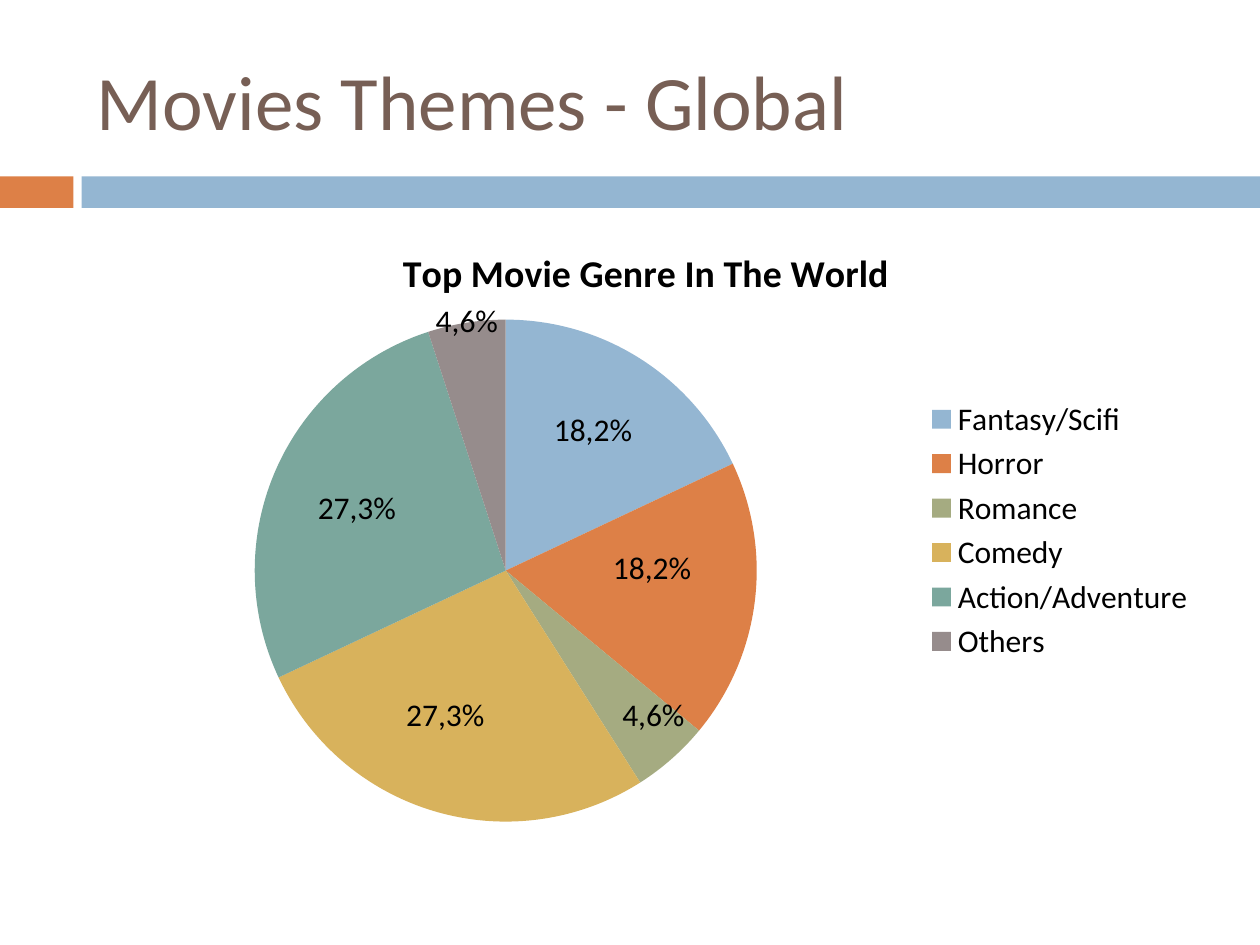
from lxml import etree
from pptx import Presentation
from pptx.chart.data import CategoryChartData
from pptx.dml.color import RGBColor
from pptx.enum.chart import XL_CHART_TYPE, XL_LEGEND_POSITION
from pptx.enum.shapes import MSO_SHAPE
from pptx.enum.text import MSO_ANCHOR, MSO_AUTO_SIZE
from pptx.oxml.ns import qn
from pptx.util import Pt

FONT = "Calibri"
BLUE, ORANGE, BROWN, BLACK = "94B6D2", "DD8047", "775F55", "000000"

# Genre, value, slice colour, then share label with its left and top
GENRES = [
    ("Fantasy/Scifi", 18, BLUE, "18,2%", 309.4, 230.8),
    ("Horror", 18, ORANGE, "18,2%", 343.2, 309.6),
    ("Romance", 5, "A5AB81", "4,6%", 348.5, 393.8),
    ("Comedy", 27, "D8B25C", "27,3%", 225, 393.8),
    ("Action/Adventure", 27, "7BA79D", "27,3%", 174.5, 275.4),
    ("Others", 5, "968C8C", "4,6%", 241.9, 168.5),
]


def color(hex_code):
    return RGBColor.from_string(hex_code)


def style_font(font, size, hex_code):
    font.name = FONT
    font.size = Pt(size)
    font.color.rgb = color(hex_code)


def add_bar(page, left, width, hex_code):
    bar = page.shapes.add_shape(
        MSO_SHAPE.RECTANGLE, Pt(left), Pt(100.8), Pt(width), Pt(18))
    bar.shadow.inherit = False
    bar.fill.solid()
    bar.fill.fore_color.rgb = color(hex_code)
    bar.line.fill.background()


def add_text(page, text, left, top, width, height, size, hex_code):
    box = page.shapes.add_textbox(Pt(left), Pt(top), Pt(width), Pt(height))
    frame = box.text_frame
    frame.word_wrap = True
    para = frame.paragraphs[0]
    para.text = text
    style_font(para.font, size, hex_code)
    return frame


def place_plot(chart, **fractions):
    """Fix the inner plot area, in fractions of the chart."""
    area = chart.plots[0]._element.getparent()
    for old in area.findall(qn("c:layout")):
        area.remove(old)
    layout = etree.Element(qn("c:layout"))
    area.insert(0, layout)
    manual = etree.SubElement(layout, qn("c:manualLayout"))
    settings = {"layoutTarget": "inner", "xMode": "edge", "yMode": "edge"}
    for tag, value in {**settings, **fractions}.items():
        etree.SubElement(manual, qn(f"c:{tag}")).set("val", str(value))


def add_genre_pie(page):
    data = CategoryChartData()
    data.categories = [genre[0] for genre in GENRES]
    data.add_series("Series 1", [genre[1] for genre in GENRES])
    chart = page.shapes.add_chart(
        XL_CHART_TYPE.PIE, Pt(48.2), Pt(126), Pt(642.2), Pt(354.2), data).chart
    style_font(chart.font, 18, BLACK)
    place_plot(chart, x=0.15, y=0.16, w=0.45, h=0.81)

    # Title and legend
    chart.has_title = True
    span = chart.chart_title.text_frame.paragraphs[0].add_run()
    span.text = "Top Movie Genre In The World"
    style_font(span.font, 21.6, BLACK)
    span.font.bold = True
    chart.chart_title.include_in_layout = False
    chart.has_legend = True
    chart.legend.position = XL_LEGEND_POSITION.RIGHT
    chart.legend.include_in_layout = False

    # Slices
    plot = chart.plots[0]
    plot.vary_by_categories = True
    for index, genre in enumerate(GENRES):
        fill = plot.series[0].points[index].format.fill
        fill.solid()
        fill.fore_color.rgb = color(genre[2])


def main():
    deck = Presentation()
    deck.slide_width, deck.slide_height = Pt(720), Pt(540)
    page = deck.slides.add_slide(deck.slide_layouts[6])

    # Band under the title
    add_bar(page, 0, 42, ORANGE)
    add_bar(page, 46.6, 673.4, BLUE)

    # Title
    title = add_text(page, "Movies Themes - Global",
                     48.2, 18, 642.2, 77.8, 44, BROWN)
    title.vertical_anchor = MSO_ANCHOR.MIDDLE

    # Pie and its share labels
    add_genre_pie(page)
    for _, _, _, share, left, top in GENRES:
        label = add_text(page, share, left, top, 73.4, 29.1, 18, BLACK)
        label.auto_size = MSO_AUTO_SIZE.SHAPE_TO_FIT_TEXT

    deck.save("out.pptx")


if __name__ == "__main__":
    main()
